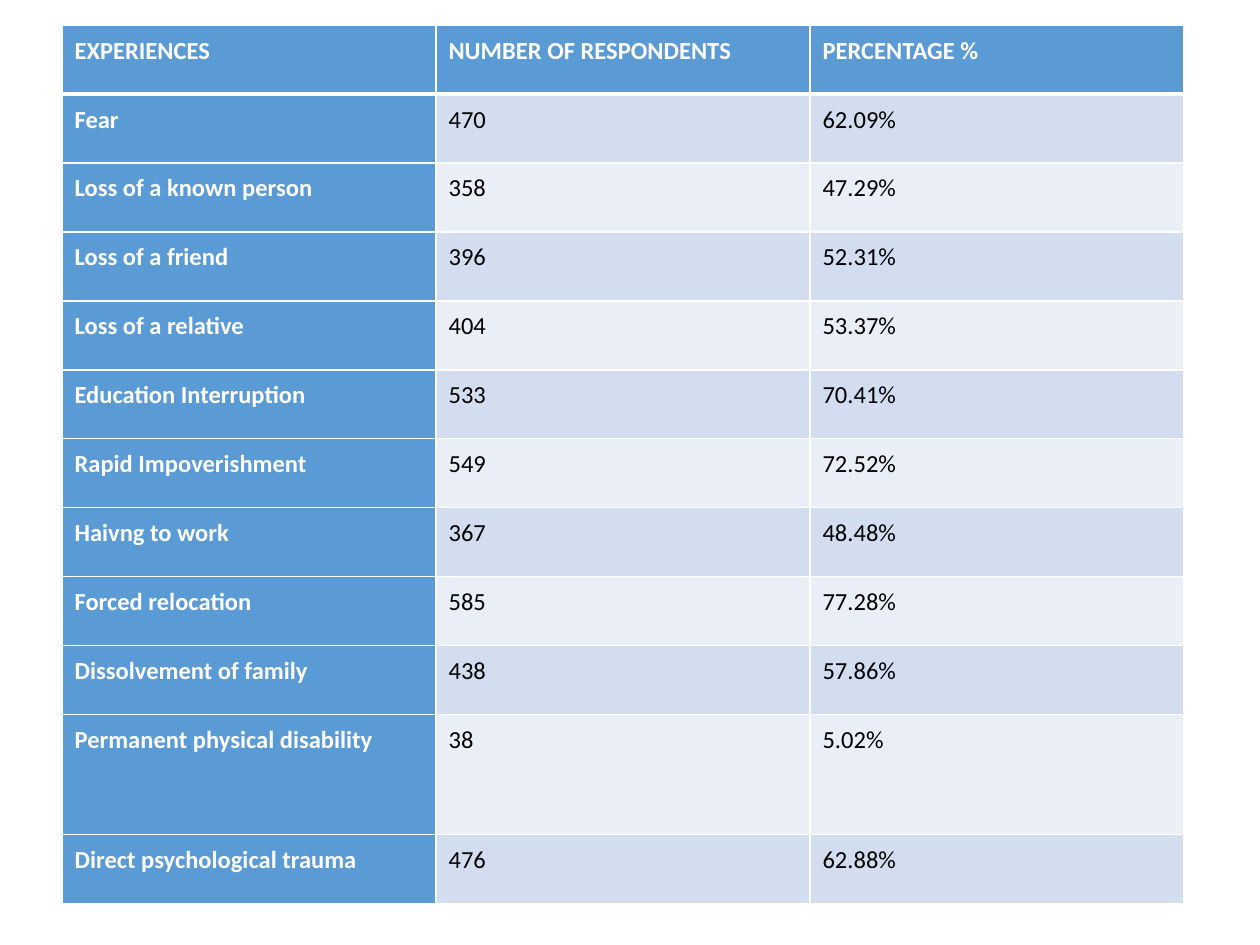
"""Build a slide with a table of reported experiences."""
from lxml.etree import SubElement
from pptx import Presentation
from pptx.dml.color import RGBColor
from pptx.oxml.ns import qn
from pptx.util import Pt

HEADER = ("EXPERIENCES", "NUMBER OF RESPONDENTS", "PERCENTAGE %")
RESPONSES = [
    ("Fear", "470", "62.09%"),
    ("Loss of a known person", "358", "47.29%"),
    ("Loss of a friend", "396", "52.31%"),
    ("Loss of a relative", "404", "53.37%"),
    ("Education Interruption", "533", "70.41%"),
    ("Rapid Impoverishment", "549", "72.52%"),
    ("Haivng to work", "367", "48.48%"),
    ("Forced relocation", "585", "77.28%"),
    ("Dissolvement of family", "438", "57.86%"),
    ("Permanent physical disability", "38", "5.02%"),
    ("Direct psychological trauma", "476", "62.88%"),
]
TALL_ROW = "Permanent physical disability"
LEFT, TOP, COLUMN_WIDTH, ROW_HEIGHT, TALL_HEIGHT = 62, 25, 374, 69, 120
BLUE, WHITE, BLACK = "5B9BD5", "FFFFFF", "000000"
BANDS = ("EAEFF7", "D2DEEF")


def px(length):
    return length * 914400 // 126


def color(value):
    return RGBColor.from_string(value)


def add_border(cell, side, width):
    line = SubElement(cell._tc.get_or_add_tcPr(), qn(f"a:ln{side}"), w=str(Pt(width)))
    fill = SubElement(line, qn("a:solidFill"))
    SubElement(fill, qn("a:srgbClr"), val=WHITE)


def format_cell(cell, text, row, column):
    heading = row == 0 or column == 0
    widths = {"L": 1, "R": 1, "T": 3 if row == 1 else 1, "B": 3 if row == 0 else 1}
    for side, width in widths.items():
        add_border(cell, side, width)
    cell.fill.solid()
    cell.fill.fore_color.rgb = color(BLUE if heading else BANDS[row % 2])
    cell.text = text
    para = cell.text_frame.paragraphs[0]
    para.line_spacing = 1.15
    para.font.name = "Calibri"
    para.font.size = Pt(14)
    para.font.bold = heading
    para.font.color.rgb = color(WHITE if heading else BLACK)


def main():
    deck = Presentation()
    deck.slide_width, deck.slide_height = px(1260), px(945)
    page = deck.slides.add_slide(deck.slide_layouts[6])
    rows = [HEADER, *RESPONSES]
    heights = [TALL_HEIGHT if row[0] == TALL_ROW else ROW_HEIGHT for row in rows]
    table = page.shapes.add_table(
        len(rows), len(HEADER), px(LEFT), px(TOP),
        px(COLUMN_WIDTH * len(HEADER)), px(sum(heights)),
    ).table
    table.first_col = True
    for column in table.columns:
        column.width = px(COLUMN_WIDTH)
    for row, (texts, height) in enumerate(zip(rows, heights)):
        table.rows[row].height = px(height)
        for column, text in enumerate(texts):
            format_cell(table.cell(row, column), text, row, column)
    deck.save("out.pptx")


if __name__ == "__main__":
    main()
